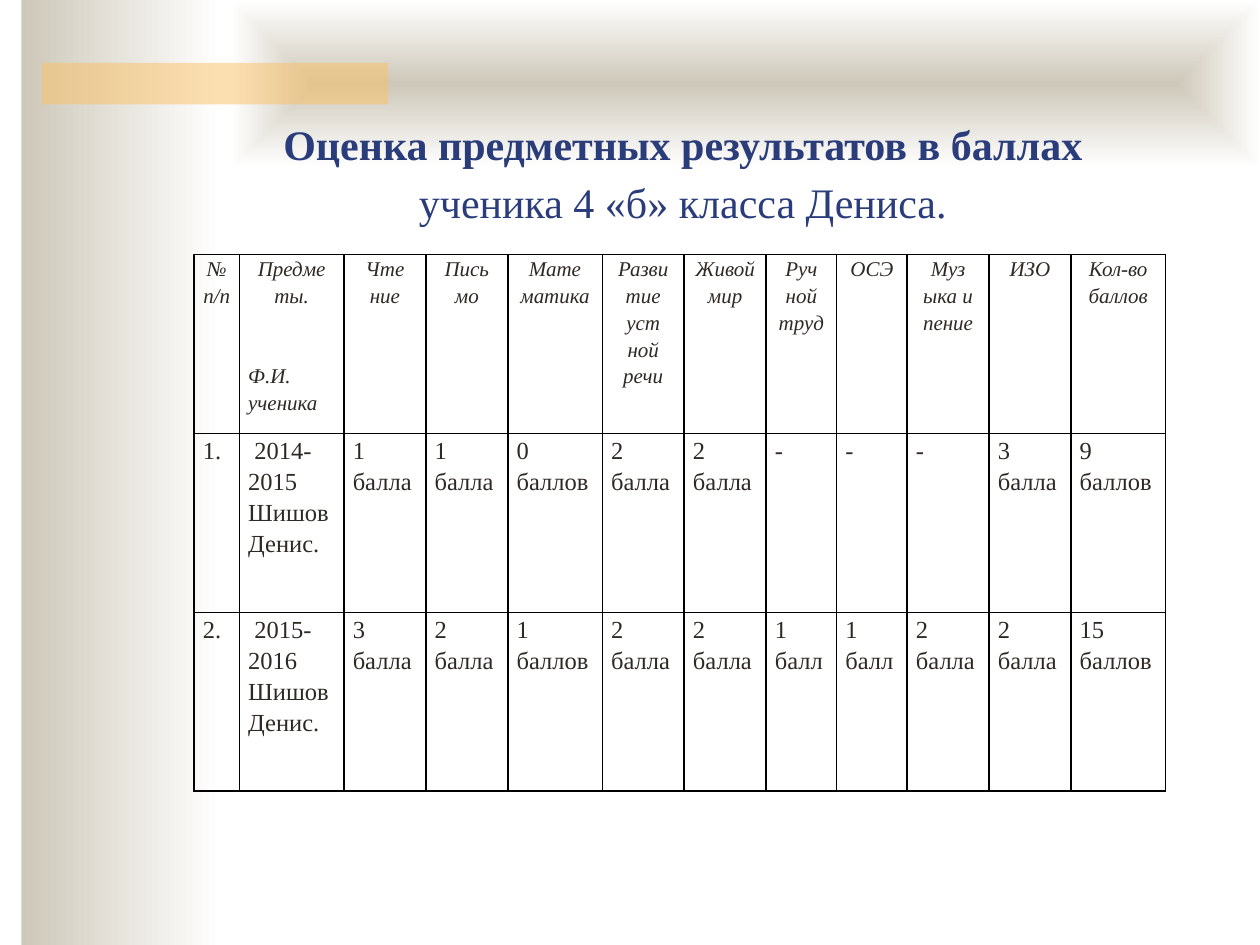
"""Build the slide with a pupil's subject results as a table of points."""
import copy
from dataclasses import dataclass
from typing import Optional

import pptx
import pptx.dml.color
import pptx.enum.shapes
import pptx.enum.text
import pptx.oxml
import pptx.oxml.ns
import pptx.util
from lxml import etree

Inches = pptx.util.Inches
Pt = pptx.util.Pt
qn = pptx.oxml.ns.qn
ALIGN = pptx.enum.text.PP_ALIGN


@dataclass(frozen=True)
class Theme:
    font: str = "Times New Roman"
    sand: str = "CEC8BA"
    white: str = "FFFFFF"
    amber: str = "FAC164"
    navy: str = "2A3D7A"
    ink: str = "2E2924"
    rule: str = "000000"
    title_size: int = 24
    header_size: int = 12
    body_size: int = 14
    line_spacing: float = 1.15
    rule_width: float = 1


@dataclass(frozen=True)
class Panel:
    left: float
    top: float
    width: float
    height: float
    color: str
    fade_to: Optional[str] = None
    from_center: bool = False
    opacity: int = 100


THEME = Theme()
PANELS = [
    Panel(0.17, 0, 1.58, 7.5, THEME.sand, fade_to=THEME.white),
    Panel(1.83, 0, 8.17, 1.33, THEME.sand, fade_to=THEME.white, from_center=True),
    Panel(0.33, 0.5, 2.75, 0.33, THEME.amber, opacity=50),
]
COLUMN_WIDTHS = [0.36, 0.83, 0.65, 0.65, 0.75, 0.65, 0.65, 0.56, 0.56, 0.65, 0.65, 0.75]
ROW_HEIGHT = 1.42
SUBJECTS = [
    "№ п/п", "Предме\nты.\nФ.И. ученика", "Чте\nние", "Пись\nмо", "Мате\nматика",
    "Разви\nтие уст\nной речи", "Живой мир", "Руч\nной труд", "ОСЭ",
    "Муз\nыка и пение", "ИЗО", "Кол-во баллов",
]
YEARS = [
    ["1.", " 2014-2015 Шишов Денис.", "1 балла", "1 балла", "0 баллов", "2 балла",
     "2 балла", "-", "-", "-", "3 балла", "9 баллов"],
    ["2.", " 2015-2016 Шишов Денис.", "3 балла", "2 балла", "1 баллов", "2 балла",
     "2 балла", "1 балл", "1 балл", "2 балла", "2 балла", "15 баллов"],
]


def rgb(color: str):
    return pptx.dml.color.RGBColor.from_string(color)


def write(paragraph, text: str, *, size: float, color: str, bold=False, italic=False,
          align=ALIGN.LEFT):
    paragraph.alignment = align
    paragraph.line_spacing = THEME.line_spacing
    run = paragraph.add_run()
    run.text = text
    run.font.name = THEME.font
    run.font.size = Pt(size)
    run.font.bold = bold
    run.font.italic = italic
    run.font.color.rgb = rgb(color)
    return run


def draw_panel(slide, panel: Panel) -> None:
    box = [Inches(side) for side in (panel.left, panel.top, panel.width, panel.height)]
    shape = slide.shapes.add_shape(pptx.enum.shapes.MSO_SHAPE.RECTANGLE, *box)
    shape.shadow.inherit = False
    shape.line.fill.background()
    if panel.fade_to is None:
        shape.fill.solid()
        shape.fill.fore_color.rgb = rgb(panel.color)
        tint = shape.element.spPr.find(qn("a:solidFill"))[0]
        etree.SubElement(tint, qn("a:alpha"), val=str(panel.opacity * 1000))
        return
    shape.fill.gradient()
    shape.fill.gradient_angle = 0
    for stop, color in zip(shape.fill.gradient_stops, (panel.color, panel.fade_to)):
        stop.color.rgb = rgb(color)
    if panel.from_center:
        gradient = shape.element.spPr.find(qn("a:gradFill"))
        direction = etree.Element(qn("a:path"), {"path": "shape"})
        center = {side: "50000" for side in "ltrb"}
        etree.SubElement(direction, qn("a:fillToRect"), center)
        gradient.replace(gradient.find(qn("a:lin")), direction)


def draw_title(slide) -> None:
    title = slide.shapes.title
    slide.shapes.element.append(title.element)
    title.left, title.top = Inches(1.17), Inches(0.92)
    title.width, title.height = Inches(8.5), Inches(1.34)
    frame = title.text_frame
    frame.word_wrap = True
    frame.auto_size = pptx.enum.text.MSO_AUTO_SIZE.NONE
    frame.vertical_anchor = pptx.enum.text.MSO_ANCHOR.BOTTOM
    frame.margin_bottom = Inches(0.46)
    look = dict(size=THEME.title_size, color=THEME.navy, align=ALIGN.CENTER)
    heading = frame.paragraphs[0]
    subject = write(heading, "Оценка предметных результатов в баллах", bold=True, **look)
    heading.add_line_break()
    line_break = heading._p.find(qn("a:br"))
    line_break.append(copy.deepcopy(subject.font._element))
    write(heading, "ученика 4 «б» класса Дениса.", **look)


def format_cell(cell) -> None:
    cell.margin_left = cell.margin_right = Inches(0.07)
    cell.margin_top = cell.margin_bottom = 0
    properties = cell._tc.get_or_add_tcPr()
    for side in ("a:lnL", "a:lnR", "a:lnT", "a:lnB"):
        border = etree.SubElement(properties, qn(side), w=str(Pt(THEME.rule_width)))
        fill = etree.SubElement(border, qn("a:solidFill"))
        etree.SubElement(fill, qn("a:srgbClr"), val=THEME.rule)
    cell.fill.background()


def fill_cell(cell, text: str, is_header: bool) -> None:
    format_cell(cell)
    size = THEME.header_size if is_header else THEME.body_size
    for index, line in enumerate(text.split("\n")):
        frame = cell.text_frame
        paragraph = frame.add_paragraph() if index else frame.paragraphs[0]
        is_pupil_label = line.startswith("Ф.И.")
        centered = is_header and not is_pupil_label
        write(paragraph, line, size=size, color=THEME.ink, italic=is_header,
              align=ALIGN.CENTER if centered else ALIGN.LEFT)
        if is_pupil_label:
            paragraph.space_before = Pt(30.5)


def draw_results(slide) -> None:
    rows = [SUBJECTS, *YEARS]
    results = slide.shapes.add_table(
        len(rows), len(SUBJECTS), Inches(1.54), Inches(2.02),
        Inches(sum(COLUMN_WIDTHS)), Inches(ROW_HEIGHT * len(rows))).table
    results.first_row = results.horz_banding = False
    for column, width in zip(results.columns, COLUMN_WIDTHS):
        column.width = Inches(width)
    for row_index, row in enumerate(rows):
        results.rows[row_index].height = Inches(ROW_HEIGHT)
        for column_index, text in enumerate(row):
            fill_cell(results.cell(row_index, column_index), text, row_index == 0)


def main() -> None:
    deck = pptx.Presentation()
    deck.slide_width, deck.slide_height = Inches(10), Inches(7.5)
    slide = deck.slides.add_slide(deck.slide_layouts[5])
    for panel in PANELS:
        draw_panel(slide, panel)
    draw_title(slide)
    draw_results(slide)
    deck.save("out.pptx")


if __name__ == "__main__":
    main()
